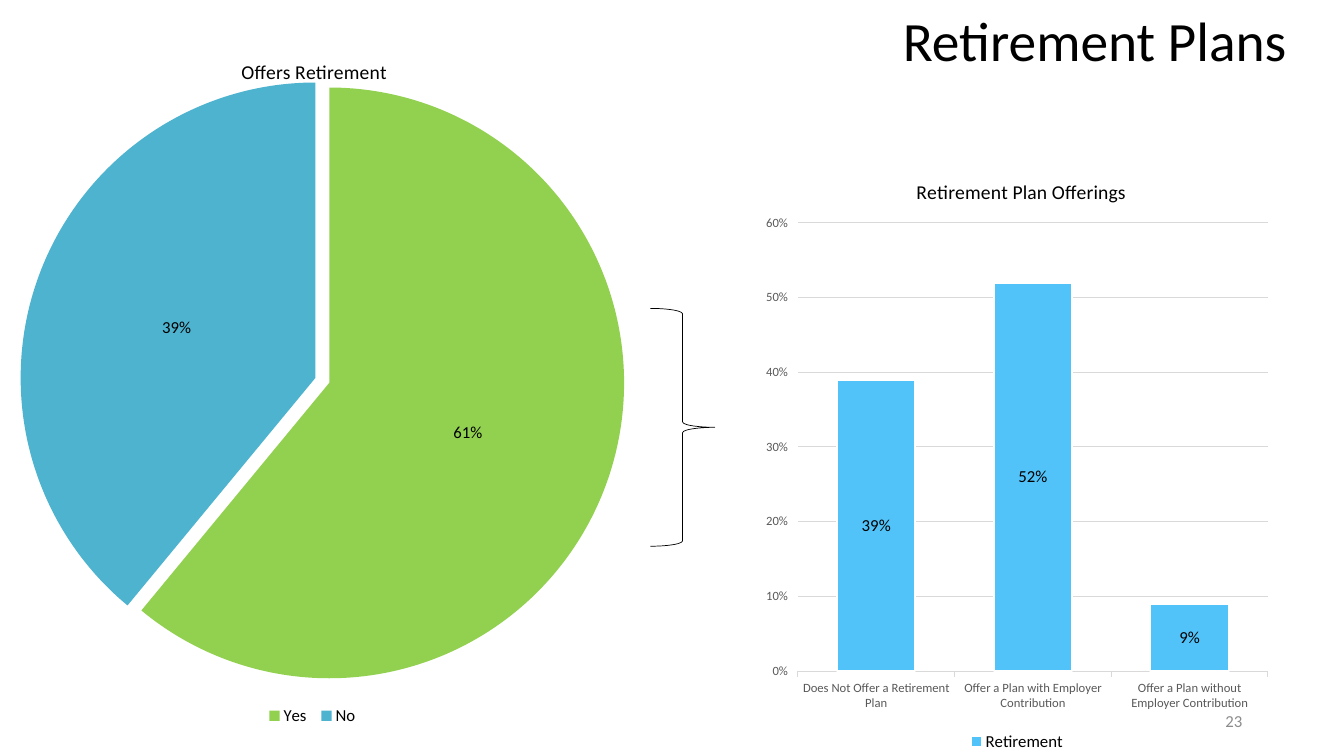
import pptx
import pptx.util
import pptx.chart.data
import pptx.dml.color
import pptx.enum.chart
import pptx.enum.shapes
import pptx.enum.text
import pptx.oxml
import pptx.oxml.ns

PX = 9144
FONT = "Calibri"
BLACK, WHITE, GREY, DARK, RULE = "000000", "FFFFFF", "8C8C8C", "595959", "D9D9D9"
GREEN, TEAL, BLUE = "92D050", "4EB3CF", "51C3F9"
ALIGN = pptx.enum.text.PP_ALIGN
XL = pptx.enum.chart


def rgb(value):
    """Return a colour from a hex string."""
    return pptx.dml.color.RGBColor.from_string(value)


def box(*lengths):
    """Turn pixel lengths into EMU."""
    return [pptx.util.Emu(n * PX) for n in lengths]


def assign(obj, values):
    """Set attributes of an object from a dict."""
    for name, value in values.items():
        setattr(obj, name, value)


def set_font(font, size, color):
    """Format a font in the slide's typeface."""
    assign(font, {"name": FONT, "size": pptx.util.Pt(size), "bold": False})
    font.color.rgb = rgb(color)


def set_line(line, color, width):
    """Give a line its colour and width."""
    line.color.rgb = rgb(color)
    line.width = pptx.util.Pt(width)


def add_text(s, bounds, text, size, color, align, spacing=1.0):
    """Add a middle-anchored line of text."""
    tf = s.shapes.add_textbox(*box(*bounds)).text_frame
    assign(tf, {"word_wrap": True,
                "vertical_anchor": pptx.enum.text.MSO_ANCHOR.MIDDLE})
    p = tf.paragraphs[0]
    assign(p, {"alignment": align, "line_spacing": spacing})
    r = p.add_run()
    r.text = text
    set_font(r.font, size, color)


def layout_xml(x, y, w=None, h=None):
    """Build a manual chart layout from fractions of the chart."""
    parts = {"xMode": "edge", "yMode": "edge", "x": x, "y": y}
    if w:
        parts = {"layoutTarget": "inner", **parts, "w": w, "h": h}
    items = "".join(f'<c:{k} val="{v}"/>' for k, v in parts.items())
    return pptx.oxml.parse_xml(
        f'<c:layout {pptx.oxml.ns.nsdecls("c")}>'
        f"<c:manualLayout>{items}</c:manualLayout></c:layout>")


def place(element, layout, index):
    """Replace the layout of a chart element."""
    for old in element.findall(pptx.oxml.ns.qn("c:layout")):
        element.remove(old)
    element.insert(index, layout)


def add_chart(s, kind, bounds, title, title_at, plot_at, cats, series, values):
    """Add a one-series chart with title, legend and centred labels."""
    data = pptx.chart.data.CategoryChartData()
    data.categories = cats
    data.add_series(series, values)
    chart = s.shapes.add_chart(kind, *box(*bounds), data).chart
    set_font(chart.font, 10, BLACK)
    chart.has_title = True
    tf = chart.chart_title.text_frame
    tf.text = title
    set_font(tf.paragraphs[0].runs[0].font, 14, BLACK)
    place(chart.chart_title._element, layout_xml(*title_at), 1)
    place(chart._chartSpace.chart.plotArea, layout_xml(*plot_at), 0)
    chart.has_legend = True
    assign(chart.legend, {"position": XL.XL_LEGEND_POSITION.BOTTOM,
                          "include_in_layout": False})
    set_font(chart.legend.font, 12, BLACK)
    plot = chart.plots[0]
    plot.has_data_labels = True
    is_pie = kind == XL.XL_CHART_TYPE.PIE
    assign(plot.data_labels, {
        "show_percentage": is_pie, "show_value": not is_pie,
        "number_format": "0%", "number_format_is_linked": False,
        "position": XL.XL_LABEL_POSITION.CENTER})
    set_font(plot.data_labels.font, 12, BLACK)
    return chart


def style_pie(chart, colors):
    """Colour the slices and pull out the first one."""
    chart.plots[0].vary_by_categories = True
    points = chart.plots[0].series[0].points
    for i, color in enumerate(colors):
        fill = points[i].format.fill
        fill.solid()
        fill.fore_color.rgb = rgb(color)
    dpt = points[0].format._element if hasattr(points[0].format, "_element") else None
    if dpt is None:
        dpt = chart._chartSpace.find(".//" + pptx.oxml.ns.qn("c:dPt"))
    explosion = pptx.oxml.parse_xml(
        f'<c:explosion {pptx.oxml.ns.nsdecls("c")} val="5"/>')
    dpt.find(pptx.oxml.ns.qn("c:spPr")).addprevious(explosion)


def style_columns(chart, color):
    """Format the columns, axes and gridlines."""
    plot = chart.plots[0]
    assign(plot, {"gap_width": 100, "vary_by_categories": False})
    bars = plot.series[0].format
    bars.fill.solid()
    bars.fill.fore_color.rgb = rgb(color)
    set_line(bars.line, WHITE, 1.5)
    for axis in (chart.category_axis, chart.value_axis):
        set_font(axis.tick_labels.font, 9, DARK)
        axis.major_tick_mark = XL.XL_TICK_MARK.OUTSIDE
    set_line(chart.category_axis.format.line, RULE, 0.75)
    axis = chart.value_axis
    assign(axis, {"minimum_scale": 0, "maximum_scale": 0.6, "major_unit": 0.1,
                  "has_major_gridlines": True})
    axis.format.line.fill.background()
    set_line(axis.major_gridlines.format.line, RULE, 0.75)
    assign(axis.tick_labels, {"number_format": "0%",
                              "number_format_is_linked": False})


def add_brace(s, bounds):
    """Add an unfilled right brace."""
    sp = s.shapes.add_shape(pptx.enum.shapes.MSO_SHAPE.RIGHT_BRACE, *box(*bounds))
    sp.shadow.inherit = False
    sp.fill.background()
    set_line(sp.line, BLACK, 0.5)


def main():
    """Build the slide."""
    prs = pptx.Presentation()
    prs.slide_width, prs.slide_height = box(1333, 750)
    s = prs.slides.add_slide(prs.slide_layouts[6])
    add_text(s, (517, 9, 1150, 69), "Retirement Plans ", 39.6, BLACK,
             ALIGN.CENTER, 0.9)
    add_text(s, (942, 695, 300, 40), "23", 12, GREY, ALIGN.RIGHT)
    pie = add_chart(s, XL.XL_CHART_TYPE.PIE, (2, 26, 617, 698),
                    "Offers Retirement", (0.38, 0.04), (0.03, 0.08, 0.95, 0.84),
                    ["Yes ", "No"], "Series 1", [61, 39])
    style_pie(pie, [GREEN, TEAL])
    columns = add_chart(s, XL.XL_CHART_TYPE.COLUMN_CLUSTERED, (750, 149, 518, 601),
                        "Retirement Plan Offerings", (0.3, 0.04),
                        (0.08, 0.12, 0.9, 0.74),
                        ["Does Not Offer a Retirement Plan",
                         "Offer a Plan with Employer Contribution",
                         "Offer a Plan without Employer Contribution"],
                        "Retirement", [0.39, 0.52, 0.09])
    style_columns(columns, BLUE)
    add_brace(s, (645, 306, 64, 236))
    prs.save("out.pptx")


if __name__ == "__main__":
    main()
